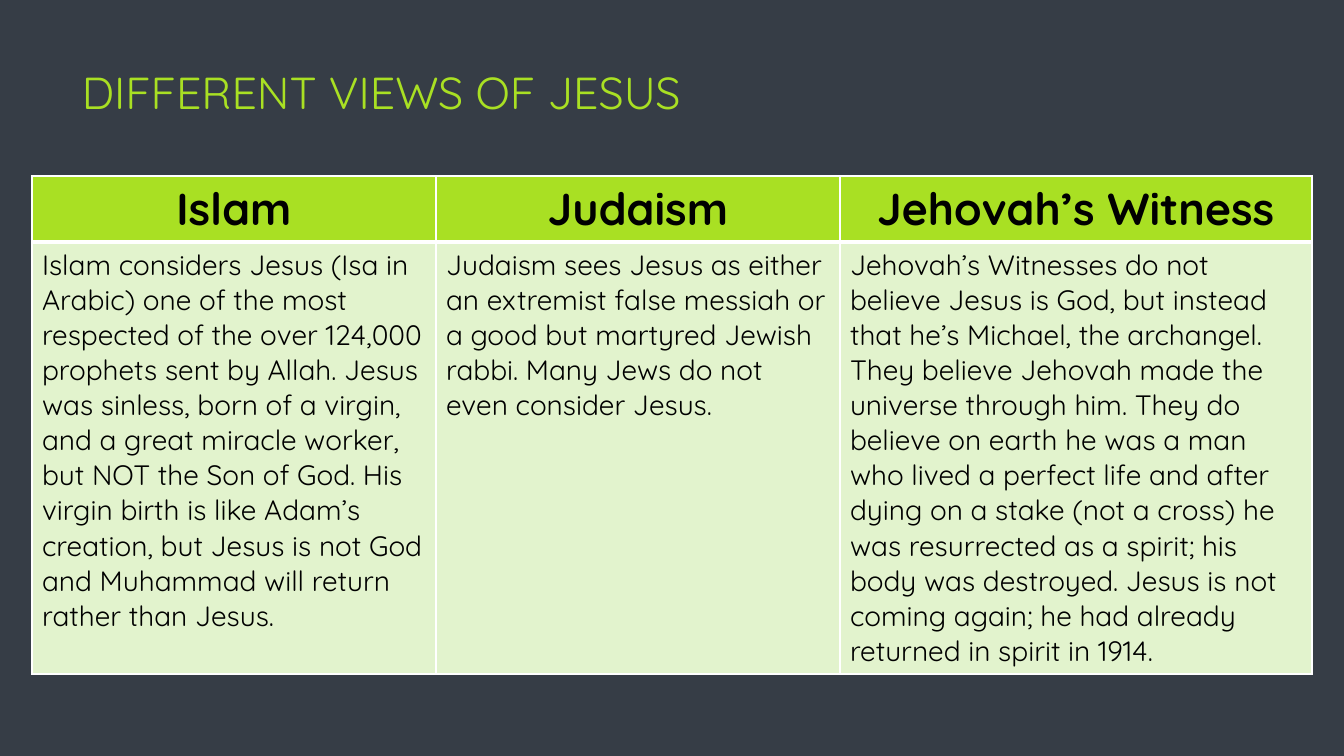
from lxml.etree import SubElement
from pptx import Presentation
from pptx.dml.color import RGBColor
from pptx.enum.text import MSO_ANCHOR, PP_ALIGN
from pptx.oxml.ns import qn
from pptx.util import Emu, Pt

SLATE = RGBColor(0x36, 0x3D, 0x46)
LIME = RGBColor(0xA9, 0xE0, 0x23)
PALE = RGBColor(0xE2, 0xF3, 0xCD)
WHITE = RGBColor(0xFF, 0xFF, 0xFF)
BLACK = RGBColor(0x00, 0x00, 0x00)

VIEWS = [
    ("Islam", 404,
     "Islam considers Jesus (Isa in Arabic) one of the most respected of the "
     "over 124,000 prophets sent by Allah. Jesus was sinless, born of a virgin, "
     "and a great miracle worker, but NOT the Son of God. His virgin birth is "
     "like Adam’s creation, but Jesus is not God and Muhammad will return "
     "rather than Jesus."),
    ("Judaism", 404,
     "Judaism sees Jesus as either an extremist false messiah or a good but "
     "martyred Jewish rabbi. Many Jews do not even consider Jesus."),
    ("Jehovah’s Witness", 472,
     "Jehovah’s Witnesses do not believe Jesus is God, but instead that he’s "
     "Michael, the archangel. They believe Jehovah made the universe through "
     "him. They do believe on earth he was a man who lived a perfect life and "
     "after dying on a stake (not a cross) he was resurrected as a spirit; his "
     "body was destroyed. Jesus is not coming again; he had already returned in "
     "spirit in 1914."),
]


def px(n):
    return Emu(round(n * 914400 / 100.8))


class Deck:
    font = "Quicksand"

    def __init__(self, width, height, background):
        self.prs = Presentation()
        self.prs.slide_width, self.prs.slide_height = px(width), px(height)
        self.s = self.prs.slides.add_slide(self.prs.slide_layouts[6])
        fill = self.s.background.fill
        fill.solid()
        fill.fore_color.rgb = background

    def add_run(self, tf, text, size, color, bold=False, align=PP_ALIGN.LEFT):
        p = tf.paragraphs[0]
        p.alignment = align
        r = p.add_run()
        r.text = text
        r.font.name, r.font.size, r.font.bold = self.font, Pt(size), bold
        r.font.color.rgb = color

    def text(self, x, y, w, h, text, size, color):
        sp = self.s.shapes.add_textbox(px(x), px(y), px(w), px(h))
        tf = sp.text_frame
        tf.word_wrap = True
        tf.vertical_anchor = MSO_ANCHOR.TOP
        self.add_run(tf, text, size, color)

    def cell(self, cell, text, size, fill, edges, bold, align):
        tcPr = cell._tc.get_or_add_tcPr()
        for side, width in edges.items():
            ln = SubElement(tcPr, qn(f"a:ln{side}"), w=str(Pt(width)))
            solid = SubElement(ln, qn("a:solidFill"))
            SubElement(solid, qn("a:srgbClr"), val=str(WHITE))
        cell.fill.solid()
        cell.fill.fore_color.rgb = fill
        self.add_run(cell.text_frame, text, size, BLACK, bold, align)

    def table(self, x, y, columns, head_h, body_h):
        width = sum(w for _, w, _ in columns)
        table = self.s.shapes.add_table(2, len(columns), px(x), px(y),
                                        px(width), px(head_h + body_h)).table
        table.rows[0].height, table.rows[1].height = px(head_h), px(body_h)
        for i, (head, w, body) in enumerate(columns):
            table.columns[i].width = px(w)
            self.cell(table.cell(0, i), head, 32, LIME,
                      {"L": 1, "R": 1, "T": 1, "B": 3}, True, PP_ALIGN.CENTER)
            self.cell(table.cell(1, i), body, 20, PALE,
                      {"L": 1, "R": 1, "T": 3, "B": 1}, False, PP_ALIGN.LEFT)


def main():
    deck = Deck(1344, 756, SLATE)
    # Title
    deck.text(72, 60, 1092, 116, "DIFFERENT VIEWS OF JESUS", 32, LIME)
    # Comparison table
    deck.table(32, 176, VIEWS, 66, 432)
    deck.prs.save("out.pptx")


if __name__ == "__main__":
    main()
